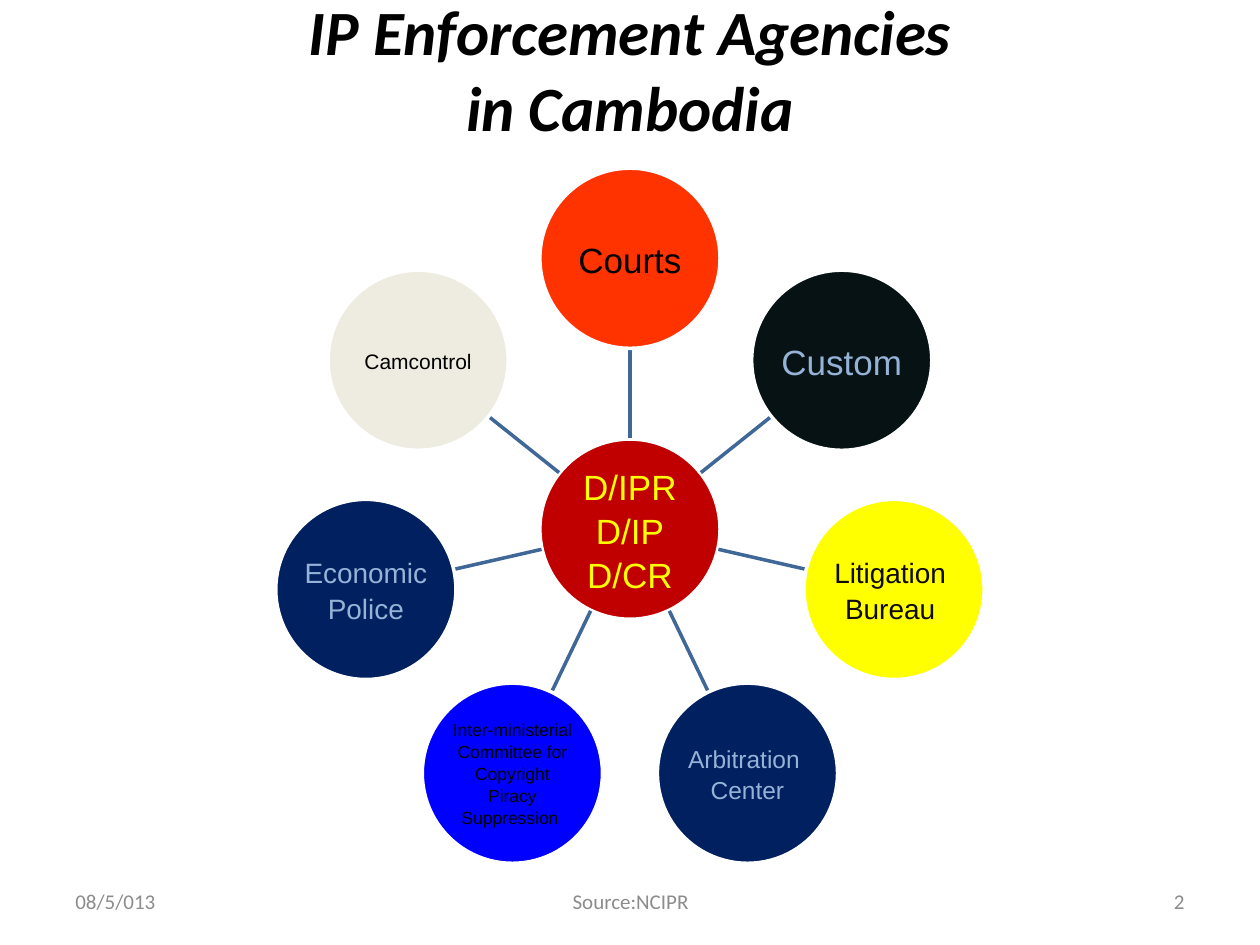
from math import cos, pi, sin

from lxml import etree
from pptx import Presentation
from pptx.dml.color import RGBColor
from pptx.enum.shapes import MSO_CONNECTOR, MSO_SHAPE
from pptx.enum.text import MSO_ANCHOR, MSO_AUTO_SIZE, PP_ALIGN
from pptx.oxml.ns import qn
from pptx.util import Inches, Pt

OVAL = MSO_SHAPE.OVAL
STRAIGHT = MSO_CONNECTOR.STRAIGHT
MIDDLE = MSO_ANCHOR.MIDDLE
LEFT, CENTER, RIGHT = PP_ALIGN.LEFT, PP_ALIGN.CENTER, PP_ALIGN.RIGHT

COLORS = {
    "black": "000000", "white": "FFFFFF", "gray": "8C8C8C", "spoke": "3F6797",
    "crimson": "C00000", "yellow": "FFFF00", "orange": "FF3300",
    "ink": "071215", "sky": "95B3D7", "navy": "002060", "blue": "0000FF",
    "cream": "EEECE1", "dark": "0D0A10",
}

TITLE = "IP Enforcement Agencies\vin Cambodia"
HUB = (["D/IPR", "D/IP", "D/CR"], 20, "crimson", "yellow")
AGENCIES = [
    (["Courts"], 20, "orange", "black"),
    (["Custom"], 20, "ink", "sky"),
    (["Litigation ", "Bureau "], 16, "yellow", "dark"),
    (["Arbitration ", "Center"], 14, "navy", "sky"),
    (["Inter-ministerial Committee for Copyright Piracy Suppression "],
     10, "blue", "black"),
    (["Economic ", "Police"], 16, "navy", "sky"),
    (["Camcontrol"], 12, "cream", "black"),
]
FOOTERS = [
    ("08/5/013", 0.5, 2.33, LEFT),
    ("Source:NCIPR", 3.42, 3.17, CENTER),
    ("2", 7.17, 2.33, RIGHT),
]

CX, CY = 5, 4.2
RING = 2.15
DIAMETER = 1.43
SPOKE_START, SPOKE_END = 0.72, 1.44


def rgb(name):
    return RGBColor.from_string(COLORS[name])


def style_runs(p, color, **fmt):
    for r in p.runs:
        r.font.color.rgb = rgb(color)
        for key, value in fmt.items():
            setattr(r.font, key, value)


def polar(angle, radius):
    return CX + radius * sin(angle), CY - radius * cos(angle)


def add_circle(s, center, lines, size, fill, color):
    x, y = (Inches(c - DIAMETER / 2) for c in center)
    sp = s.shapes.add_shape(OVAL, x, y, Inches(DIAMETER), Inches(DIAMETER))
    sp.shadow.inherit = False
    sp.fill.solid()
    sp.fill.fore_color.rgb = rgb(fill)
    sp.line.color.rgb = rgb("white")
    sp.line.width = Pt(2)
    tf = sp.text_frame
    tf.word_wrap = True
    tf.vertical_anchor = MIDDLE
    for side in ("left", "top", "right", "bottom"):
        setattr(tf, f"margin_{side}", Inches(0.01))
    tf.text = "\n".join(lines)
    for p in tf.paragraphs:
        p.alignment = CENTER
        p.line_spacing = 1.05
        style_runs(p, color, name="Arial", size=Pt(size))


def add_spoke(s, angle):
    ends = polar(angle, SPOKE_START) + polar(angle, SPOKE_END)
    line = s.shapes.add_connector(STRAIGHT, *map(Inches, ends))
    line.line.color.rgb = rgb("spoke")
    line.line.width = Pt(2)
    etree.SubElement(line._element.spPr, qn("a:effectLst"))


def add_title(s):
    title = s.shapes.title
    box = {"left": 0.5, "top": -0.25, "width": 9, "height": 1.58}
    for key, value in box.items():
        setattr(title, key, Inches(value))
    tf = title.text_frame
    tf.text = TITLE
    tf.auto_size = MSO_AUTO_SIZE.NONE
    tf.vertical_anchor = MIDDLE
    p = tf.paragraphs[0]
    p.alignment = CENTER
    style_runs(p, "black", name="Calibri", size=Pt(36), bold=True, italic=True)


def add_footer(s, text, left, width, align):
    box = s.shapes.add_textbox(Inches(left), Inches(6.95), Inches(width), Inches(0.4))
    tf = box.text_frame
    tf.word_wrap = True
    tf.vertical_anchor = MIDDLE
    tf.text = text
    p = tf.paragraphs[0]
    p.alignment = align
    style_runs(p, "gray", name="Calibri", size=Pt(12))


def main():
    prs = Presentation()
    prs.slide_width, prs.slide_height = Inches(10), Inches(7.5)
    s = prs.slides.add_slide(prs.slide_layouts[5])
    add_title(s)
    add_circle(s, (CX, CY), *HUB)
    for i, agency in enumerate(AGENCIES):
        angle = 2 * pi * i / len(AGENCIES)
        add_spoke(s, angle)
        add_circle(s, polar(angle, RING), *agency)
    for footer in FOOTERS:
        add_footer(s, *footer)
    prs.save("out.pptx")


if __name__ == "__main__":
    main()
